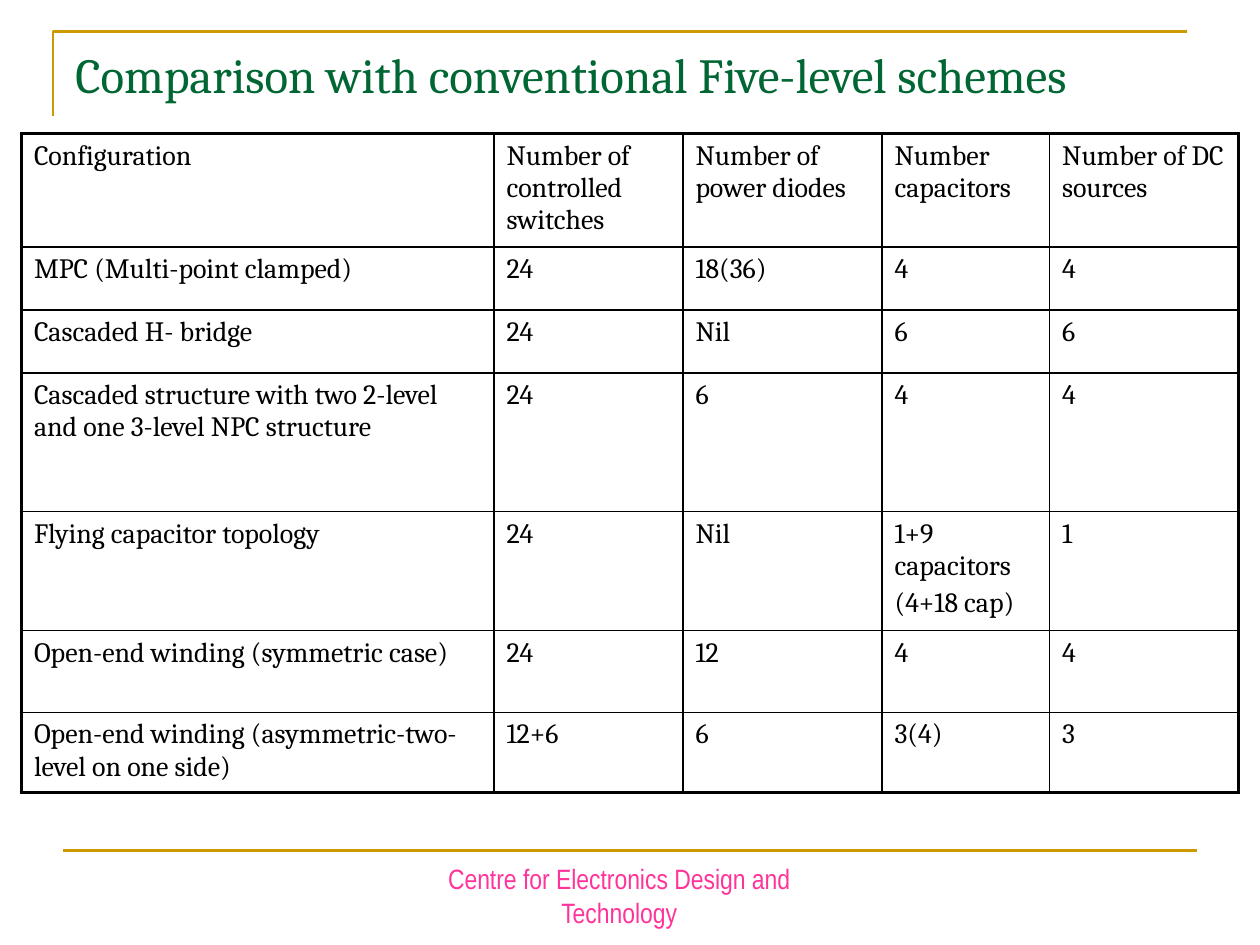
from lxml import etree
from pptx import Presentation
from pptx.dml.color import RGBColor
from pptx.enum.shapes import MSO_CONNECTOR
from pptx.enum.text import MSO_ANCHOR, PP_ALIGN
from pptx.oxml.ns import qn
from pptx.util import Inches, Pt

STRAIGHT = MSO_CONNECTOR.STRAIGHT
TOP, BOTTOM = MSO_ANCHOR.TOP, MSO_ANCHOR.BOTTOM
LEFT, CENTER = PP_ALIGN.LEFT, PP_ALIGN.CENTER

COLORS = {
    "rule": "CC9900",
    "title": "006633",
    "footer": "FF3399",
    "text": "000000",
    "border": "000000",
}
SERIF = "Cambria"
NARROW = "Arial Narrow"
THIN, THICK = 1, 2.25

COLUMN_WIDTHS = [3.75, 1.5, 1.58, 1.33, 1.5]
ROW_HEIGHTS = [0.86, 0.5, 0.5, 1.1, 0.91, 0.65, 0.61]
COMPARISON = [
    ["Configuration", "Number of controlled switches", "Number of power diodes",
     "Number capacitors", "Number of DC sources"],
    ["MPC (Multi-point clamped)", "24", "18(36)", "4", "4"],
    ["Cascaded H- bridge", "24", "Nil", "6", "6"],
    ["Cascaded structure with two 2-level and one 3-level NPC structure",
     "24", "6", "4", "4"],
    ["Flying capacitor topology", "24", "Nil", "1+9 capacitors\n(4+18 cap)", "1"],
    ["Open-end winding (symmetric case)", "24", "12", "4", "4"],
    ["Open-end winding (asymmetric-two-level on one side)",
     "12+6", "6", "3(4)", "3"],
]


class SlideBuilder:
    def __init__(self, slide):
        self.slide = slide

    def color(self, name):
        return RGBColor.from_string(COLORS[name])

    def style_line(self, line):
        line.color.rgb = self.color("rule")
        line.width = Pt(1.5)

    def style_paragraph(self, paragraph, size, font_name, color, align=LEFT):
        paragraph.alignment = align
        paragraph.font.size = Pt(size)
        paragraph.font.name = font_name
        paragraph.font.color.rgb = self.color(color)

    def outline(self, points):
        start, *others = [(Inches(x), Inches(y)) for x, y in points]
        builder = self.slide.shapes.build_freeform(*start)
        builder.add_line_segments(others, close=False)
        shape = builder.convert_to_shape()
        shape.shadow.inherit = False
        shape.fill.background()
        self.style_line(shape.line)

    def rule(self, left, right, top):
        connector = self.slide.shapes.add_connector(
            STRAIGHT, Inches(left), Inches(top), Inches(right), Inches(top))
        self.style_line(connector.line)
        etree.SubElement(connector._element.spPr, qn("a:effectLst"))

    def text(self, box, text, size, font_name, color, align=LEFT, anchor=TOP):
        shape = self.slide.shapes.add_textbox(*map(Inches, box))
        frame = shape.text_frame
        frame.word_wrap = True
        frame.vertical_anchor = anchor
        frame.text = text
        self.style_paragraph(frame.paragraphs[0], size, font_name, color, align)

    def border(self, cell, widths):
        properties = cell._tc.get_or_add_tcPr()
        for index, (side, width) in enumerate(widths.items()):
            line = etree.Element(qn(f"a:ln{side}"), w=str(Pt(width)))
            fill = etree.SubElement(line, qn("a:solidFill"))
            etree.SubElement(fill, qn("a:srgbClr"), val=COLORS["border"])
            properties.insert(index, line)

    def table(self, left, top, rows, column_widths, row_heights):
        last_row, last_column = len(rows) - 1, len(column_widths) - 1
        frame = self.slide.shapes.add_table(
            len(rows), len(column_widths), Inches(left), Inches(top),
            Inches(sum(column_widths)), Inches(sum(row_heights)))
        table = frame.table
        table.first_row = False
        table.horz_banding = False
        for column, width in zip(table.columns, column_widths):
            column.width = Inches(width)
        for row, height in zip(table.rows, row_heights):
            row.height = Inches(height)
        for row_index, values in enumerate(rows):
            for column_index, value in enumerate(values):
                cell = table.cell(row_index, column_index)
                cell.text = value
                cell.fill.background()
                for index, paragraph in enumerate(cell.text_frame.paragraphs):
                    self.style_paragraph(paragraph, 16, SERIF, "text")
                    if index:
                        paragraph.space_before = Pt(3.2)
                self.border(cell, {
                    "L": THICK if column_index == 0 else THIN,
                    "R": THICK if column_index == last_column else THIN,
                    "T": THICK if row_index == 0 else THIN,
                    "B": THICK if row_index == last_row else THIN,
                })


def main():
    presentation = Presentation()
    presentation.slide_width = Inches(10)
    presentation.slide_height = Inches(7.5)
    builder = SlideBuilder(
        presentation.slides.add_slide(presentation.slide_layouts[6]))

    builder.outline([(0.42, 0.92), (0.42, 0.25), (9.42, 0.25)])
    builder.rule(0.5, 9.5, 6.75)
    builder.text((3.33, 6.92, 3.17, 0.5),
                 "Centre for Electronics Design and Technology",
                 16, NARROW, "footer", CENTER, BOTTOM)
    builder.text((0.5, 0.3, 9, 1.25),
                 "Comparison with conventional Five-level schemes",
                 28, SERIF, "title")
    builder.table(0.17, 1.06, COMPARISON, COLUMN_WIDTHS, ROW_HEIGHTS)

    presentation.save("out.pptx")


if __name__ == "__main__":
    main()
